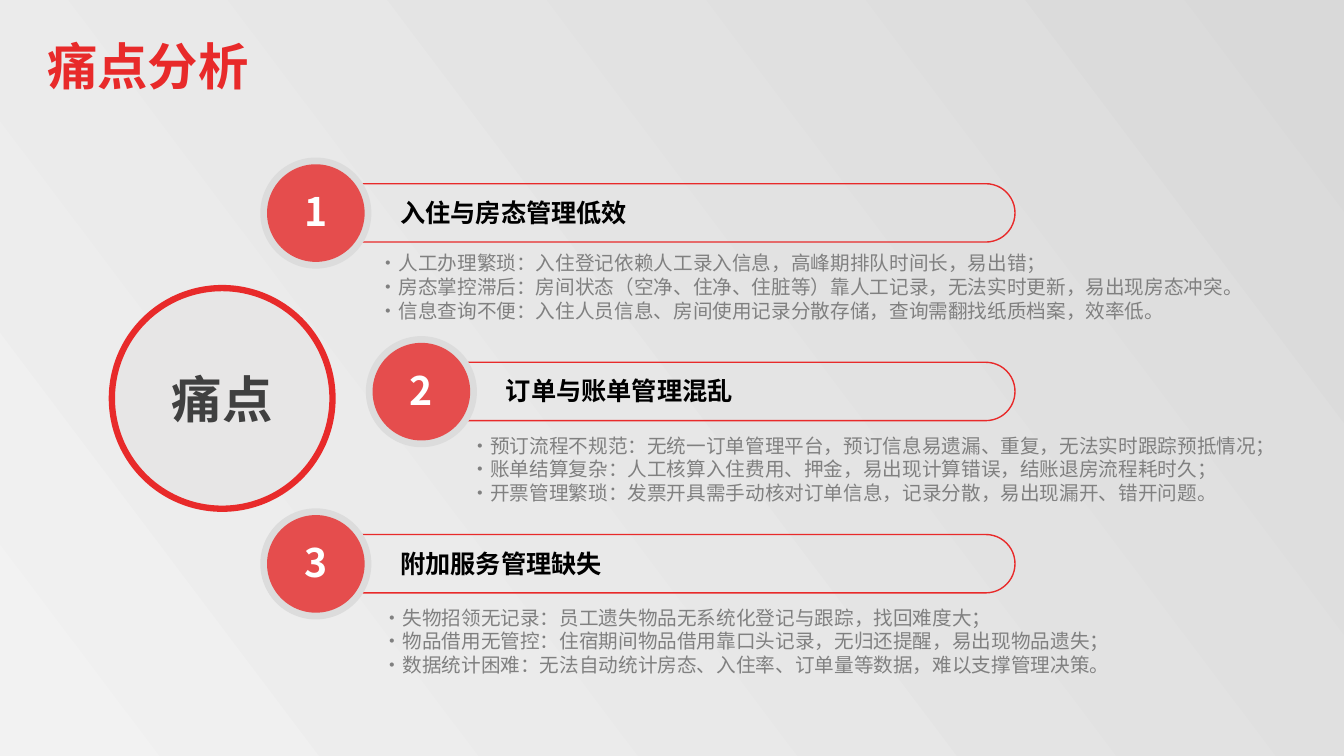
from pptx import Presentation
from pptx.dml.color import RGBColor
from pptx.enum.shapes import MSO_SHAPE
from pptx.enum.text import MSO_ANCHOR, PP_ALIGN
from pptx.oxml.ns import qn
from pptx.util import Cm, Pt
from lxml.etree import SubElement

FONT = "Noto Sans CJK JP"
HUES = {
    "red": "E82A2A", "halo": "DCDCDC", "disc": "E7E6E6", "dark": "404040",
    "black": "000000", "grey": "808080", "white": "FFFFFF",
    "deep": "D9D9D9", "pale": "F2F2F2",
}
ROWS = [
    (6.56, 3.97, 2.74, 2.24, 22.07, "入住与房态管理低效", [
        "人工办理繁琐：入住登记依赖人工录入信息，高峰期排队时间长，易出错；",
        "房态掌控滞后：房间状态（空净、住净、住脏等）靠人工记录，无法实时更新，易出现房态冲突。",
        "信息查询不便：入住人员信息、房间使用记录分散存储，查询需翻找纸质档案，效率低。"]),
    (9.22, 8.47, 2.39, 2.33, 21.26, "订单与账单管理混乱", [
        "预订流程不规范：无统一订单管理平台，预订信息易遗漏、重复，无法实时跟踪预抵情况；",
        "账单结算复杂：人工核算入住费用、押金，易出现计算错误，结账退房流程耗时久；",
        "开票管理繁琐：发票开具需手动核对订单信息，记录分散，易出现漏开、错开问题。"]),
    (6.56, 12.81, 2.84, 2.33, 23.75, "附加服务管理缺失", [
        "失物招领无记录：员工遗失物品无系统化登记与跟踪，找回难度大；",
        "物品借用无管控：住宿期间物品借用靠口头记录，无归还提醒，易出现物品遗失；",
        "数据统计困难：无法自动统计房态、入住率、订单量等数据，难以支撑管理决策。"]),
]
HALO = 2.8
RIM = 0.17
BAR_END = 25.58


def hue(name):
    return RGBColor.from_string(HUES[name])


def write(frame, lines, size, color, bold=True, align=PP_ALIGN.LEFT, wrap=True):
    frame.word_wrap = wrap
    for i, line in enumerate(lines):
        para = frame.paragraphs[0] if i == 0 else frame.add_paragraph()
        para.alignment = align
        run = para.add_run()
        run.text = line
        font = run.font
        font.name, font.size, font.bold = FONT, Pt(size), bold
        font.color.rgb = hue(color)
        SubElement(font._element, qn("a:ea")).set("typeface", FONT)


def label(slide, box, lines, size, color, **style):
    text = slide.shapes.add_textbox(*map(Cm, box))
    write(text.text_frame, lines, size, color, **style)


def form(slide, kind, box, fill=None, line=None, width=1, alpha=None):
    part = slide.shapes.add_shape(kind, *map(Cm, box))
    part.shadow.inherit = False
    if fill:
        part.fill.solid()
        part.fill.fore_color.rgb = hue(fill)
    else:
        part.fill.background()
    if alpha:
        tint = part.fill._xPr.find(qn("a:solidFill"))[0]
        SubElement(tint, qn("a:alpha")).set("val", str(alpha * 1000))
    if line:
        part.line.color.rgb = hue(line)
        part.line.width = Pt(width)
    else:
        part.line.fill.background()
    return part


def backdrop(slide):
    fill = slide.background.fill
    fill.gradient()
    fill.gradient_angle = 217
    for stop, name, place in zip(fill.gradient_stops, ("deep", "pale"), (0, 1)):
        stop.color.rgb = hue(name)
        stop.position = place


def hub(slide, x, y, size):
    disc = form(slide, MSO_SHAPE.OVAL, (x, y, size, size), "disc", "red", 4.5)
    disc.text_frame.vertical_anchor = MSO_ANCHOR.MIDDLE
    write(disc.text_frame, ["痛点"], 36, "dark", align=PP_ALIGN.CENTER)


def point(slide, number, x, y, dx, dy, width, head, lines):
    left = x + RIM
    bar = form(slide, MSO_SHAPE.ROUNDED_RECTANGLE,
               (left, y + 0.66, BAR_END - left, 1.47), line="red")
    bar.adjustments[0] = 0.5
    label(slide, (x + 3.28, y + 0.87, 7.2, 1.02), [head], 18, "black")
    label(slide, (x + dx, y + dy, width, 2.06), ["•" + line for line in lines],
          14, "grey", bold=False)
    form(slide, MSO_SHAPE.OVAL, (x, y, HALO, HALO), "halo")
    core = HALO - 2 * RIM
    form(slide, MSO_SHAPE.OVAL, (left, y + RIM, core, core), "red", alpha=80)
    label(slide, (x, y + 0.63, HALO, 1.45), [str(number)], 28, "white",
          align=PP_ALIGN.CENTER)


def main():
    deck = Presentation()
    deck.slide_width, deck.slide_height = Cm(33.87), Cm(19.05)
    slide = deck.slides.add_slide(deck.slide_layouts[6])
    backdrop(slide)
    hub(slide, 2.82, 7.26, 5.56)
    label(slide, (0.94, 0.76, 5.61, 1.8), ["痛点分析"], 36, "red", wrap=False)
    for number, row in enumerate(ROWS, 1):
        point(slide, number, *row)
    deck.save("out.pptx")


if __name__ == "__main__":
    main()
